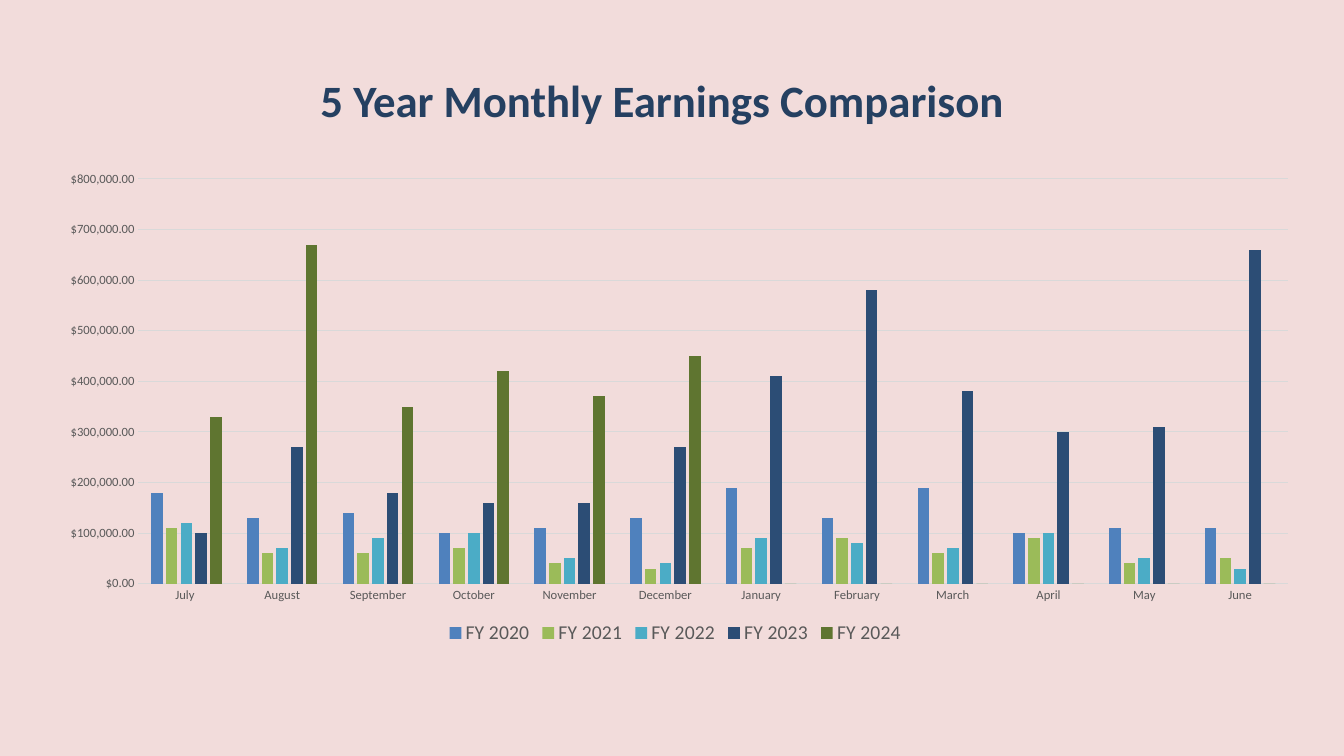
from lxml.etree import SubElement
from pptx import Presentation
from pptx.chart.data import CategoryChartData
from pptx.dml.color import RGBColor
from pptx.enum.chart import XL_CHART_TYPE, XL_LEGEND_POSITION, XL_TICK_MARK
from pptx.enum.text import MSO_ANCHOR, PP_ALIGN
from pptx.oxml.ns import qn
from pptx.util import Inches, Pt

FONT = "Calibri"
COLORS = {
    "background": "F2DCDB",
    "title": "254061",
    "space": "000000",
    "label": "595959",
    "grid": "D9D9D9",
    "FY 2020": "4F81BD",
    "FY 2021": "9BBB59",
    "FY 2022": "4BACC6",
    "FY 2023": "2C4D75",
    "FY 2024": "5F7530",
}
MONTHS = ["July ", "August", "September", "October", "November", "December",
          "January", "February", "March", "April", "May", "June"]
EARNINGS_IN_THOUSANDS = {
    "FY 2020": [180, 130, 140, 100, 110, 130, 190, 130, 190, 100, 110, 110],
    "FY 2021": [110, 60, 60, 70, 40, 30, 70, 90, 60, 90, 40, 50],
    "FY 2022": [120, 70, 90, 100, 50, 40, 90, 80, 70, 100, 50, 30],
    "FY 2023": [100, 270, 180, 160, 160, 270, 410, 580, 380, 300, 310, 660],
    "FY 2024": [330, 670, 350, 420, 370, 450, 0, 0, 0, 0, 0, 0],
}


def color(name):
    return RGBColor.from_string(COLORS[name])


def format_font(font, size, color_name, bold=False):
    font.name = FONT
    font.size = Pt(size)
    font.bold = bold
    font.color.rgb = color(color_name)


def add_text(paragraph, text, **text_format):
    run = paragraph.add_run()
    run.text = text
    format_font(run.font, **text_format)


def add_title(slide):
    title = slide.shapes.title
    title.left, title.top = Inches(0.89), Inches(0.57)
    title.width, title.height = Inches(11.5), Inches(0.79)
    title.text_frame.word_wrap = True
    title.text_frame.vertical_anchor = MSO_ANCHOR.MIDDLE
    paragraph = title.text_frame.paragraphs[0]
    paragraph.alignment = PP_ALIGN.CENTER
    paragraph.line_spacing = 0.9
    add_text(paragraph, "5 Year Monthly Earnings Comparison",
             size=32, color_name="title", bold=True)
    add_text(paragraph, " ", size=44, color_name="space")


def format_axis(axis):
    axis.major_tick_mark = XL_TICK_MARK.NONE
    axis.minor_tick_mark = XL_TICK_MARK.NONE
    format_font(axis.tick_labels.font, 9, "label")


def format_line(line):
    line.color.rgb = color("grid")
    line.width = Pt(0.75)


def place_plot_area(chart, left, top, width, height):
    plot_area = chart.plots[0]._element.getparent()
    layout = plot_area.find(qn("c:layout"))
    if layout is not None:
        plot_area.remove(layout)
    layout = SubElement(plot_area, qn("c:layout"))
    plot_area.insert(0, layout)
    manual = SubElement(layout, qn("c:manualLayout"))
    settings = {"layoutTarget": "inner", "xMode": "edge", "yMode": "edge",
                "x": left, "y": top, "w": width, "h": height}
    for tag, value in settings.items():
        SubElement(manual, qn(f"c:{tag}")).set("val", str(value))


def add_earnings_chart(slide):
    data = CategoryChartData(number_format='"$"#,##0.00')
    data.categories = MONTHS
    for year, thousands in EARNINGS_IN_THOUSANDS.items():
        data.add_series(year, [value * 1000 for value in thousands])
    chart = slide.shapes.add_chart(
        XL_CHART_TYPE.COLUMN_CLUSTERED, Inches(0.62), Inches(1.57),
        Inches(12.16), Inches(4.87), data).chart
    chart.has_title = False
    format_font(chart.font, 10, "space")

    plot = chart.plots[0]
    plot.gap_width = 219
    plot.overlap = -27
    plot.vary_by_categories = False
    for series in plot.series:
        series.invert_if_negative = False
        series.format.fill.solid()
        series.format.fill.fore_color.rgb = color(series.name)

    format_axis(chart.category_axis)
    format_line(chart.category_axis.format.line)
    value_axis = chart.value_axis
    format_axis(value_axis)
    value_axis.format.line.fill.background()
    value_axis.has_major_gridlines = True
    format_line(value_axis.major_gridlines.format.line)
    value_axis.minimum_scale = 0
    value_axis.maximum_scale = 800000
    value_axis.major_unit = 100000
    value_axis.tick_labels.number_format = '"$"#,##0.00'
    value_axis.tick_labels.number_format_is_linked = False

    chart.has_legend = True
    chart.legend.position = XL_LEGEND_POSITION.BOTTOM
    chart.legend.include_in_layout = False
    format_font(chart.legend.font, 14, "label")
    place_plot_area(chart, 0.062, 0.042, 0.938, 0.825)


def main():
    presentation = Presentation()
    presentation.slide_width = Inches(13.33)
    presentation.slide_height = Inches(7.5)
    slide = presentation.slides.add_slide(presentation.slide_layouts[5])
    slide.background.fill.solid()
    slide.background.fill.fore_color.rgb = color("background")
    add_title(slide)
    add_earnings_chart(slide)
    presentation.save("out.pptx")


if __name__ == "__main__":
    main()
